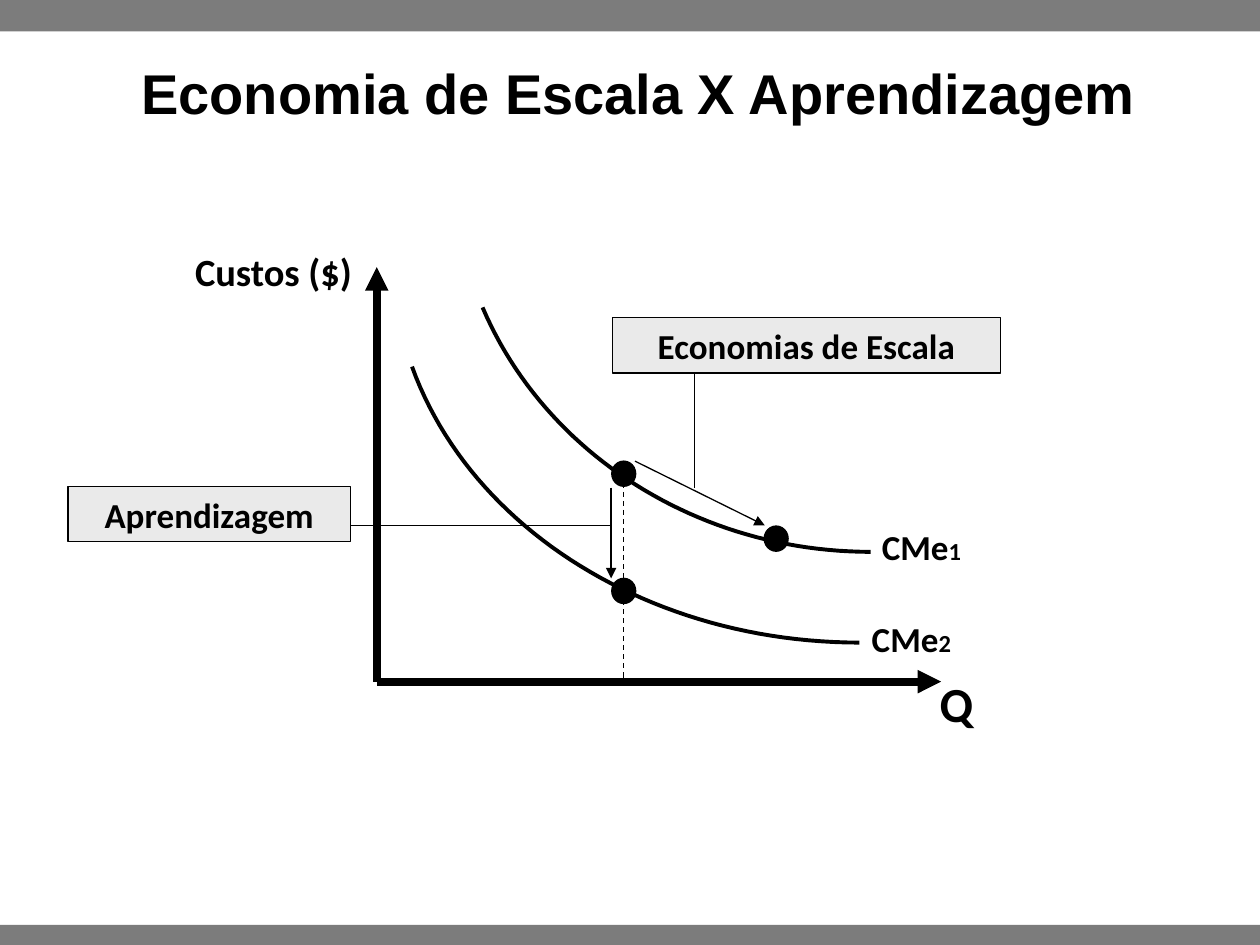
from dataclasses import dataclass

from lxml.etree import SubElement
from pptx import Presentation
from pptx.dml.color import RGBColor
from pptx.enum.dml import MSO_LINE
from pptx.enum.shapes import MSO_CONNECTOR, MSO_SHAPE
from pptx.enum.text import MSO_ANCHOR, PP_ALIGN
from pptx.oxml.ns import qn
from pptx.util import Inches, Pt


@dataclass(frozen=True)
class Theme:
    ink: RGBColor = RGBColor(0, 0, 0)
    bar: RGBColor = RGBColor(0x7C, 0x7C, 0x7C)
    box: RGBColor = RGBColor(0xEA, 0xEA, 0xEA)
    title_font: str = "Arial"
    body_font: str = "Calibri"
    title: int = 32
    quantity: int = 28
    costs: int = 22
    label: int = 20
    index: int = 14
    thin: float = 0.75
    curve: float = 2.25
    axis: float = 4.5


class Diagram:
    COLS, ROWS = 100, 75

    def __init__(self, prs, theme):
        self.theme = theme
        self.cell_w = prs.slide_width / self.COLS
        self.cell_h = prs.slide_height / self.ROWS
        self.s = prs.slides.add_slide(prs.slide_layouts[5])

    def at(self, col, row):
        return round(col * self.cell_w), round(row * self.cell_h)

    def add_text(self, tf, runs, font, align=PP_ALIGN.LEFT):
        tf.word_wrap = True
        p = tf.paragraphs[0]
        p.alignment = align
        for text, size in runs:
            r = p.add_run()
            r.text = text
            r.font.name = font
            r.font.size = Pt(size)
            r.font.bold = True
            r.font.color.rgb = self.theme.ink

    def title(self, text, col, row, cols, rows):
        sp = self.s.shapes.title
        sp.left, sp.top = self.at(col, row)
        sp.width, sp.height = self.at(cols, rows)
        sp.text_frame.vertical_anchor = MSO_ANCHOR.MIDDLE
        self.add_text(sp.text_frame, [(text, self.theme.title)],
                      self.theme.title_font, PP_ALIGN.CENTER)

    def label(self, runs, col, row, cols, rows):
        sp = self.s.shapes.add_textbox(*self.at(col, row), *self.at(cols, rows))
        self.add_text(sp.text_frame, runs, self.theme.body_font)

    def shape(self, kind, col, row, cols, rows, fill, outlined=True):
        sp = self.s.shapes.add_shape(kind, *self.at(col, row), *self.at(cols, rows))
        sp.shadow.inherit = False
        sp.fill.solid()
        sp.fill.fore_color.rgb = fill
        if outlined:
            self.stroke(sp.line, self.theme.thin)
        else:
            sp.line.fill.background()
        return sp

    def bar(self, row, rows):
        self.shape(MSO_SHAPE.RECTANGLE, 0, row, self.COLS, rows, self.theme.bar, False)

    def dot(self, col, row):
        w, h = 1.9, 2
        self.shape(MSO_SHAPE.OVAL, col - w / 2, row - h / 2, w, h, self.theme.ink)

    def box(self, text, col, row, cols):
        sp = self.shape(MSO_SHAPE.RECTANGLE, col, row, cols, 4.4, self.theme.box)
        sp.text_frame.vertical_anchor = MSO_ANCHOR.MIDDLE
        self.add_text(sp.text_frame, [(text, self.theme.label)],
                      self.theme.body_font, PP_ALIGN.CENTER)

    def stroke(self, line, width):
        line.color.rgb = self.theme.ink
        line.width = Pt(width)

    def line(self, start, end, width, arrow=False, dashed=False):
        cn = self.s.shapes.add_connector(
            MSO_CONNECTOR.STRAIGHT, *self.at(*start), *self.at(*end))
        self.stroke(cn.line, width)
        if dashed:
            cn.line.dash_style = MSO_LINE.DASH
        sp_pr = cn._element.spPr
        if arrow:
            SubElement(sp_pr.find(qn("a:ln")), qn("a:tailEnd"), type="triangle")
        SubElement(sp_pr, qn("a:effectLst"))

    def curve(self, controls, steps=48):
        points = []
        for i in range(steps + 1):
            t = i / steps
            weights = (1 - t) ** 3, 3 * t * (1 - t) ** 2, 3 * t * t * (1 - t), t ** 3
            points.append(self.at(*(sum(w * v for w, v in zip(weights, axis))
                                    for axis in zip(*controls))))
        fb = self.s.shapes.build_freeform(*points[0])
        fb.add_line_segments(points[1:], close=False)
        sp = fb.convert_to_shape()
        sp.shadow.inherit = False
        sp.fill.background()
        self.stroke(sp.line, self.theme.curve)


def main():
    prs = Presentation()
    prs.slide_width, prs.slide_height = Inches(10), Inches(7.5)
    th = Theme()
    d = Diagram(prs, th)

    d.bar(0, 2.5)
    d.bar(73.4, 1.6)
    d.title("Economia de Escala X Aprendizagem", 9.2, 1.5, 83, 11.7)

    origin = 29.9, 54.1
    for tip in ((29.9, 21.2), (74.7, 54.1)):
        d.line(origin, tip, th.axis, arrow=True)
    d.label([("Custos ($)", th.costs)], 14.5, 19.2, 18.7, 4.7)
    d.label([("Q", th.quantity)], 73.6, 53, 13.1, 5.7)

    d.curve([(69.1, 43.8), (55.5, 43.8), (43.3, 36.1), (38.3, 24.4)])
    d.curve([(68.2, 51), (51.8, 51), (37.4, 42.1), (32.7, 29.1)])
    for index, col, row in (("1", 69, 41.2), ("2", 68.2, 48.5)):
        d.label([("CMe", th.label), (index, th.index)], col, row, 11.2, 4.3)

    d.line((49.5, 37.6), (49.5, 54.1), th.thin, dashed=True)
    for col, row in ((49.5, 37.6), (61.6, 42.75), (49.5, 46.9)):
        d.dot(col, row)
    d.line((50.4, 36.6), (60.7, 41.7), th.thin, arrow=True)
    d.line((48.5, 38.7), (48.5, 45.9), th.thin, arrow=True)

    d.line((55.1, 38.7), (55.1, 29.4), th.thin)
    d.box("Economias de Escala", 48.6, 25.2, 30.8)
    d.line((48.5, 41.7), (25.2, 41.7), th.thin)
    d.box("Aprendizagem", 5.4, 38.6, 22.4)

    prs.save("out.pptx")


if __name__ == "__main__":
    main()
